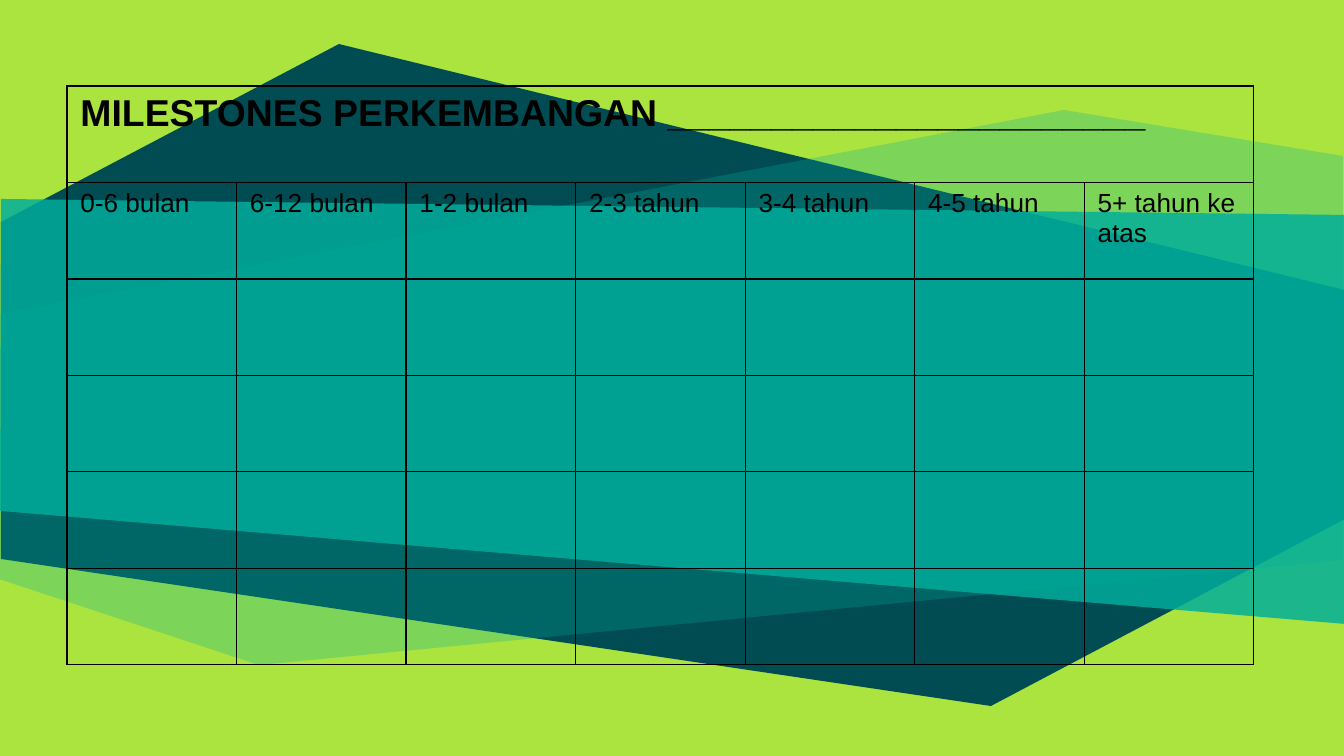
import pptx
import pptx.util
import pptx.dml.color
import pptx.oxml.ns
import lxml.etree
from dataclasses import dataclass

SCALE = 914400 / 134.4


def px(n):
    return pptx.util.Emu(round(n * SCALE))


def rgb(code):
    return pptx.dml.color.RGBColor.from_string(code)


@dataclass(frozen=True)
class Theme:
    back: str = "ABE33F"
    dark: str = "004C52"
    teal: str = "00AE9D"
    ink: str = "000000"
    font: str = "Arial"
    head: int = 20
    body: int = 14
    rule: float = 0.75


class Deck:
    def __init__(self, theme):
        self.theme = theme
        self.file = pptx.Presentation()
        self.file.slide_width = px(1344)
        self.file.slide_height = px(756)
        self.slide = self.file.slides.add_slide(self.file.slide_layouts[6])
        fill = self.slide.background.fill
        fill.solid()
        fill.fore_color.rgb = rgb(theme.back)

    def child(self, parent, tag, **attrs):
        return lxml.etree.SubElement(parent, pptx.oxml.ns.qn(tag), attrs)

    def facet(self, points, color, alpha=100):
        pen = self.slide.shapes.build_freeform(*points[0], scale=SCALE)
        pen.add_line_segments(points[1:], close=True)
        shape = pen.convert_to_shape()
        shape.shadow.inherit = False
        shape.line.fill.background()
        shape.fill.solid()
        shape.fill.fore_color.rgb = rgb(color)
        if alpha < 100:
            tint = shape._element.spPr.find(
                "./" + pptx.oxml.ns.qn("a:solidFill")
                + "/" + pptx.oxml.ns.qn("a:srgbClr"))
            self.child(tint, "a:alpha", val=str(alpha * 1000))

    def border(self, cell):
        props = cell._tc.get_or_add_tcPr()
        width = str(pptx.util.Pt(self.theme.rule))
        for side in "LRTB":
            line = self.child(props, "a:ln" + side, w=width)
            fill = self.child(line, "a:solidFill")
            self.child(fill, "a:srgbClr", val=self.theme.ink)
        cell.fill.background()

    def label(self, cell, text, size, bold=False):
        run = cell.text_frame.paragraphs[0].add_run()
        run.text = text
        font = run.font
        font.name = self.theme.font
        font.size = pptx.util.Pt(size)
        font.bold = bold
        font.color.rgb = rgb(self.theme.ink)

    def grid(self, left, top, width, height, title, heads, rows):
        cols = len(heads)
        frame = self.slide.shapes.add_table(
            rows, cols, px(left), px(top), px(width), px(height))
        table = frame.table
        table.first_row = table.horz_banding = False
        for cell in table.iter_cells():
            self.border(cell)
        table.cell(0, 0).merge(table.cell(0, cols - 1))
        self.label(table.cell(0, 0), title, self.theme.head, True)
        for col, text in enumerate(heads):
            self.label(table.cell(1, col), text, self.theme.body)


def main():
    theme = Theme()
    deck = Deck(theme)
    deck.facet([(1345, 290), (1345, 519), (991, 706), (1, 559),
                (1, 222), (339, 44)], theme.dark)
    deck.facet([(1343, 156), (1064, 110), (-1, 314), (-1, 579),
                (259, 665), (1343, 560)], theme.teal, 27)
    deck.facet([(1, 199), (0, 511), (1345, 624), (1345, 215)], theme.teal, 83)
    ages = ["0-6 bulan", "6-12 bulan", "1-2 bulan", "2-3 tahun",
            "3-4 tahun", "4-5 tahun", "5+ tahun ke atas"]
    deck.grid(67, 86, 1187, 579,
              "MILESTONES PERKEMBANGAN _______________________", ages, 6)
    deck.file.save("out.pptx")


if __name__ == "__main__":
    main()
